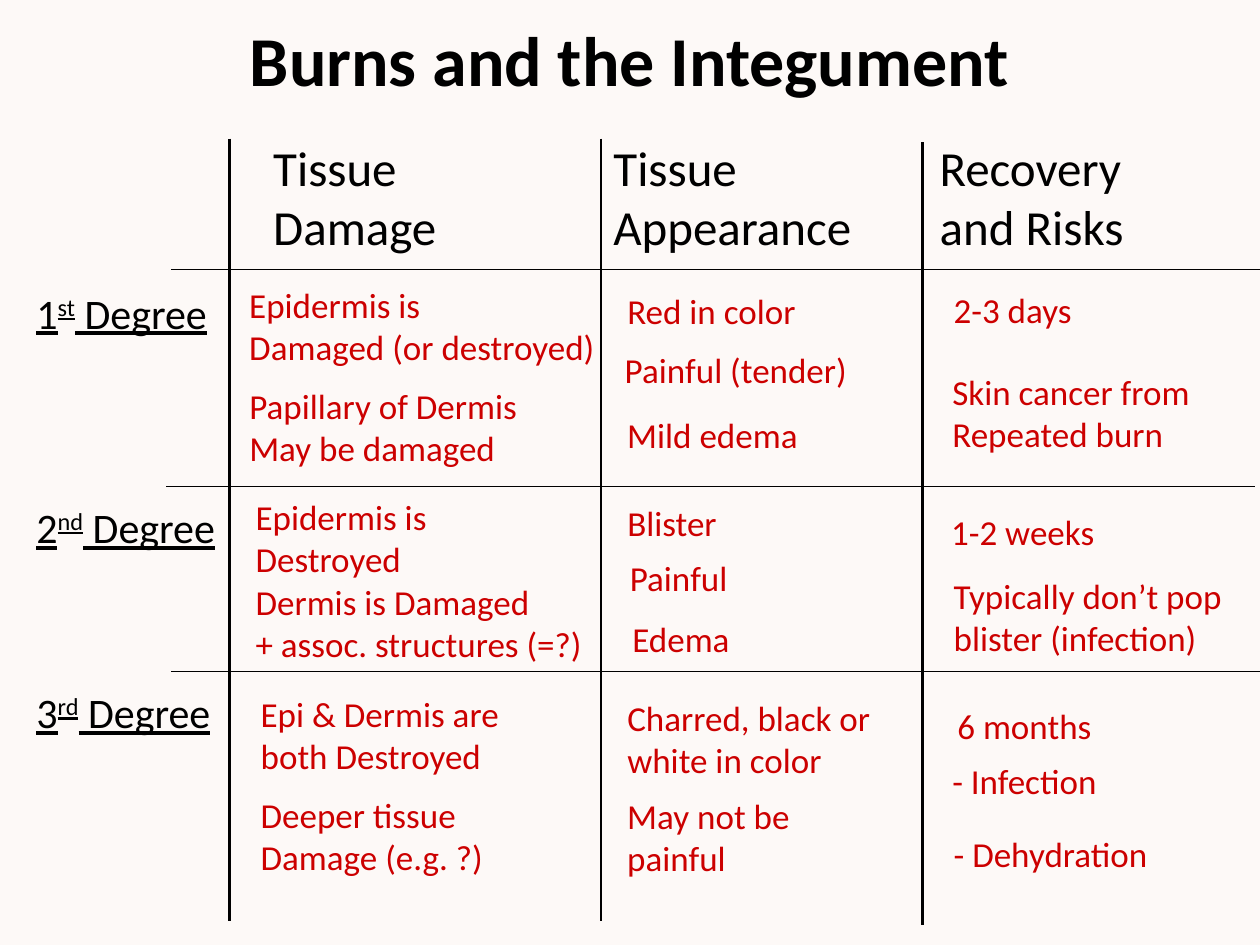
from dataclasses import dataclass

from lxml import etree
from pptx import Presentation
from pptx import util as u
from pptx.dml.color import RGBColor
from pptx.enum import shapes, text
from pptx.oxml.ns import qn


@dataclass(frozen=True)
class Theme:
    font: str = "Calibri"
    back: str = "FDF9F7"
    ink: str = "000000"
    accent: str = "CC0000"
    title: int = 40
    head: int = 28
    label: int = 24
    body: int = 20
    rule: float = 1.5
    thin: float = 0.75


# Grid lines in inches: column 0 holds the degrees, row 0 the headings
COLS = [0, 1.82, 4.77, 7.32]
ROWS = [1.1, 2.14, 3.86, 5.33]


class Board:
    def __init__(self, prs, theme):
        self.t = theme
        self.s = prs.slides.add_slide(prs.slide_layouts[5])
        fill = self.s.background.fill
        fill.solid()
        fill.fore_color.rgb = RGBColor.from_string(theme.back)

    def style(self, tf, size, color, bold=False, underline=False):
        tf.word_wrap = False
        tf.auto_size = text.MSO_AUTO_SIZE.SHAPE_TO_FIT_TEXT
        for p in tf.paragraphs:
            for r in p.runs:
                f = r.font
                f.name, f.size = self.t.font, u.Pt(size)
                f.bold, f.underline = bold, underline
                f.color.rgb = RGBColor.from_string(color)

    def title(self, words, left, top, width):
        sp = self.s.shapes.title
        sp.left, sp.top, sp.width, sp.height = map(u.Inches, (left, top, width, 0.77))
        sp.text_frame.text = words
        self.style(sp.text_frame, self.t.title, self.t.ink, bold=True)

    def box(self, col, row, dx, dy, width, lines, size):
        """Add an empty text box, offset from a corner of the grid."""
        height = 0.1 + lines * size * 1.2 / 72
        place = COLS[col] + dx, ROWS[row] + dy, width, height
        return self.s.shapes.add_textbox(*map(u.Inches, place)).text_frame

    def note(self, col, row, dx, dy, width, words, size, color):
        tf = self.box(col, row, dx, dy, width, words.count("\n") + 1, size)
        tf.text = words
        self.style(tf, size, color)

    def degree(self, row, dy, width, number, suffix):
        tf = self.box(0, row, 0.19, dy, width, 1, self.t.label)
        p = tf.paragraphs[0]
        for part in (number, suffix, " Degree"):
            r = p.add_run()
            r.text = part
            if part == suffix:
                r.font._element.set("baseline", "30000")
        self.style(tf, self.t.label, self.t.ink, underline=True)

    def line(self, x1, y1, x2, y2, weight):
        ends = map(u.Inches, (x1, y1, x2, y2))
        ln = self.s.shapes.add_connector(shapes.MSO_CONNECTOR.STRAIGHT, *ends)
        ln.line.color.rgb = RGBColor.from_string(self.t.ink)
        ln.line.width = u.Pt(weight)
        etree.SubElement(ln._element.spPr, qn("a:effectLst"))


# Headings: offset from the grid corner, width, words
HEADS = [
    (0.25, 1.51, "Tissue\nDamage"),
    (0, 2.11, "Tissue\nAppearance"),
    (0.04, 1.74, "Recovery\nand Risks"),
]
DEGREES = [(0.09, 1.59, "1", "st"), (0.07, 1.66, "2", "nd"), (0.07, 1.62, "3", "rd")]

# Notes by (column, row): offsets from the cell corner, width, words
NOTES = {
    (1, 1): [(0.06, 0.06, 2.97, "Epidermis is\nDamaged (or destroyed)"),
             (0.06, 0.86, 2.35, "Papillary of Dermis\nMay be damaged")],
    (2, 1): [(0.11, 0.11, 1.55, "Red in color"),
             (0.09, 0.58, 1.98, "Painful (tender)"),
             (0.11, 1.09, 1.57, "Mild edema")],
    (3, 1): [(0.15, 0.1, 1.15, "2-3 days"),
             (0.14, 0.75, 2.11, "Skin cancer from\nRepeated burn")],
    (1, 2): [(0.11, 0.02, 1.64, "Epidermis is\nDestroyed"),
             (0.11, 0.7, 2.82, "Dermis is Damaged\n+ assoc. structures (=?)")],
    (2, 2): [(0.11, 0.07, 0.92, "Blister"),
             (0.13, 0.51, 0.98, "Painful"),
             (0.15, 0.99, 0.98, "Edema")],
    (3, 2): [(0.13, 0.14, 1.35, "1-2 weeks"),
             (0.15, 0.65, 2.35, "Typically don’t pop\nblister (infection)")],
    (1, 3): [(0.15, 0.12, 2.11, "Epi & Dermis are\nboth Destroyed"),
             (0.15, 0.92, 1.98, "Deeper tissue\nDamage (e.g. ?)")],
    (2, 3): [(0.11, 0.15, 2.21, "Charred, black or\nwhite in color"),
             (0.11, 0.93, 1.5, "May not be\npainful")],
    (3, 3): [(0.18, 0.21, 1.28, "6 months"),
             (0.14, 0.65, 1.36, "- Infection"),
             (0.15, 1.23, 1.75, "- Dehydration")],
}


def main():
    prs = Presentation()
    prs.slide_width, prs.slide_height = u.Inches(10), u.Inches(7.5)
    t = Theme()
    b = Board(prs, t)

    # Title and headings
    b.title("Burns and the Integument", 1.85, 0.08, 6.29)
    for col, (dx, width, words) in enumerate(HEADS, 1):
        b.note(col, 0, dx, -0.06, width, words, t.head, t.ink)
    for row, degree in enumerate(DEGREES, 1):
        b.degree(row, *degree)

    # Grid lines
    for x, drop in zip(COLS[1:], (0, 0, 0.03)):
        b.line(x, ROWS[0] + drop, x, 7.31 + drop, t.rule)
    for y, shift in zip(ROWS[1:], (0, -0.04, 0)):
        b.line(1.36 + shift, y, 10 + shift, y, t.thin)

    # Cell notes
    for (col, row), notes in NOTES.items():
        for dx, dy, width, words in notes:
            b.note(col, row, dx, dy, width, words, t.body, t.accent)

    prs.save("out.pptx")


if __name__ == "__main__":
    main()
